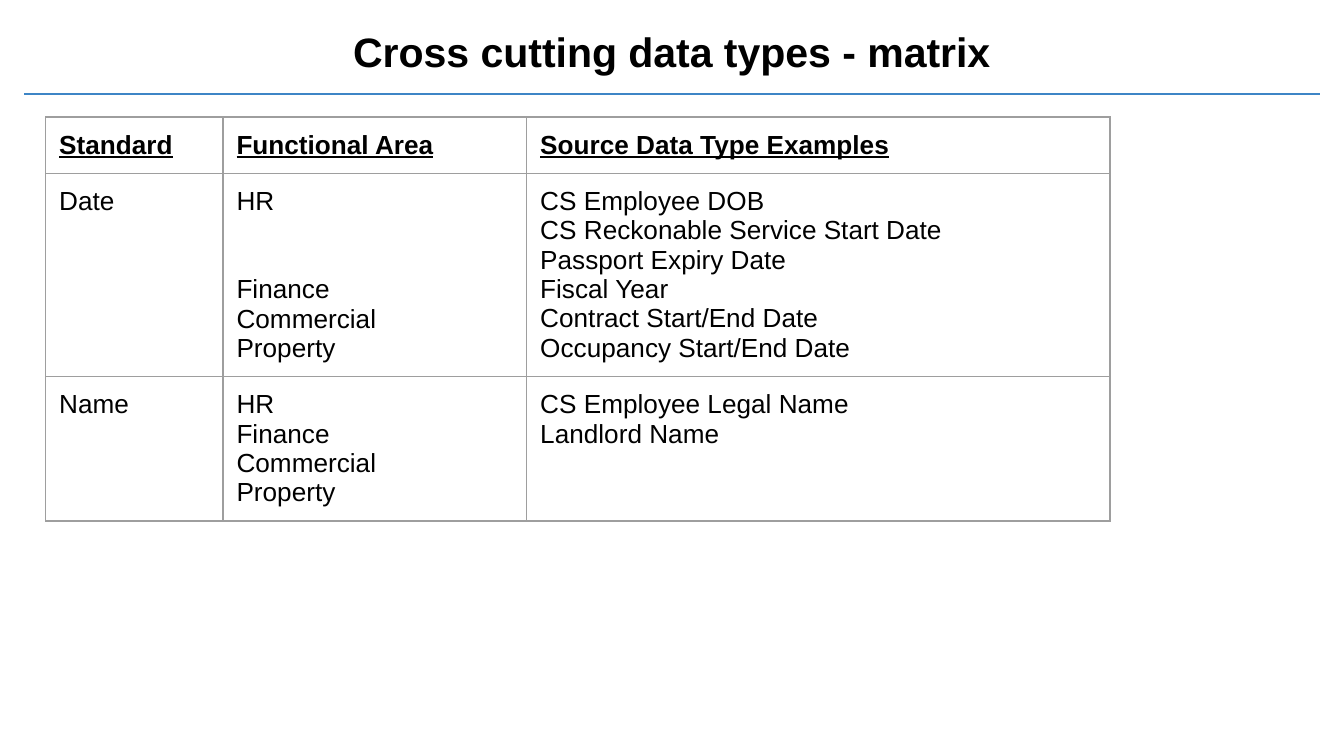
from lxml import etree
from pptx import Presentation
from pptx.dml.color import RGBColor
from pptx.enum.shapes import MSO_CONNECTOR as Connector
from pptx.enum.text import MSO_ANCHOR as Anchor, PP_ALIGN as Align
from pptx.oxml.ns import qn
from pptx.util import Inches, Pt

COLORS = {"text": "000000", "rule": "3D85C6", "grid": "9E9E9E"}
FONT = "Arial"
MARGIN = Inches(0.1)
TWO_LINES = 31.5
COLUMN_WIDTHS = [1.32, 2.26, 4.34]
ROW_HEIGHT = 0.42
HEADINGS = ["Standard", "Functional Area", "Source Data Type Examples"]
STANDARDS = [
    [
        ["Date"],
        ["HR", "Finance", "Commercial", "Property"],
        [
            "CS Employee DOB",
            "CS Reckonable Service Start Date",
            "Passport Expiry Date",
            "Fiscal Year",
            "Contract Start/End Date",
            "Occupancy Start/End Date",
        ],
    ],
    [
        ["Name"],
        ["HR", "Finance", "Commercial", "Property"],
        ["CS Employee Legal Name", "Landlord Name"],
    ],
]


def write_text(paragraph, text, size=14, bold=False, underline=False, align=Align.LEFT):
    paragraph.alignment = align
    run = paragraph.add_run()
    run.text = text
    run.font.name = FONT
    run.font.size = Pt(size)
    run.font.bold = bold
    run.font.underline = underline
    run.font.color.rgb = RGBColor.from_string(COLORS["text"])


def set_margins(holder):
    holder.margin_left = holder.margin_right = MARGIN
    holder.margin_top = holder.margin_bottom = MARGIN


def add_title(slide, text):
    title = slide.shapes.add_textbox(Inches(0.34), Inches(0.1), Inches(9.32), Inches(0.63))
    frame = title.text_frame
    frame.word_wrap = True
    frame.vertical_anchor = Anchor.TOP
    set_margins(frame)
    write_text(frame.paragraphs[0], text, size=22, bold=True, align=Align.CENTER)


def add_rule(slide):
    rule = slide.shapes.add_connector(
        Connector.STRAIGHT, Inches(0.18), Inches(0.7), Inches(9.82), Inches(0.7)
    )
    rule.line.color.rgb = RGBColor.from_string(COLORS["rule"])
    rule.line.width = Pt(1.5)
    etree.SubElement(rule._element.spPr, qn("a:effectLst"))


def add_borders(cell):
    properties = cell._tc.get_or_add_tcPr()
    for position, side in enumerate(["lnL", "lnR", "lnT", "lnB"]):
        border = etree.Element(qn(f"a:{side}"), w=str(Pt(0.75)))
        fill = etree.SubElement(border, qn("a:solidFill"))
        etree.SubElement(fill, qn("a:srgbClr"), val=COLORS["grid"])
        properties.insert(position, border)


def fill_cell(cell, lines, **text_format):
    cell.fill.background()
    cell.vertical_anchor = Anchor.TOP
    set_margins(cell)
    add_borders(cell)
    frame = cell.text_frame
    for index, line in enumerate(lines):
        paragraph = frame.add_paragraph() if index else frame.paragraphs[0]
        write_text(paragraph, line, **text_format)


def add_matrix(slide):
    row_count = len(STANDARDS) + 1
    matrix = slide.shapes.add_table(
        row_count, len(HEADINGS), Inches(0.34), Inches(0.87),
        Inches(sum(COLUMN_WIDTHS)), Inches(ROW_HEIGHT * row_count),
    ).table
    matrix.first_row = matrix.horz_banding = False
    for column, width in zip(matrix.columns, COLUMN_WIDTHS):
        column.width = Inches(width)
    for column, heading in enumerate(HEADINGS):
        fill_cell(matrix.cell(0, column), [heading], bold=True, underline=True)
    for row, standard in enumerate(STANDARDS, start=1):
        for column, lines in enumerate(standard):
            fill_cell(matrix.cell(row, column), lines)
    date_finance = matrix.cell(1, 1).text_frame.paragraphs[1]
    date_finance.space_before = Pt(TWO_LINES)


def main():
    deck = Presentation()
    deck.slide_width = Inches(10)
    deck.slide_height = deck.slide_width * 9 // 16
    slide = deck.slides.add_slide(deck.slide_layouts[6])
    add_rule(slide)
    add_matrix(slide)
    add_title(slide, "Cross cutting data types - matrix")
    deck.save("out.pptx")


if __name__ == "__main__":
    main()
